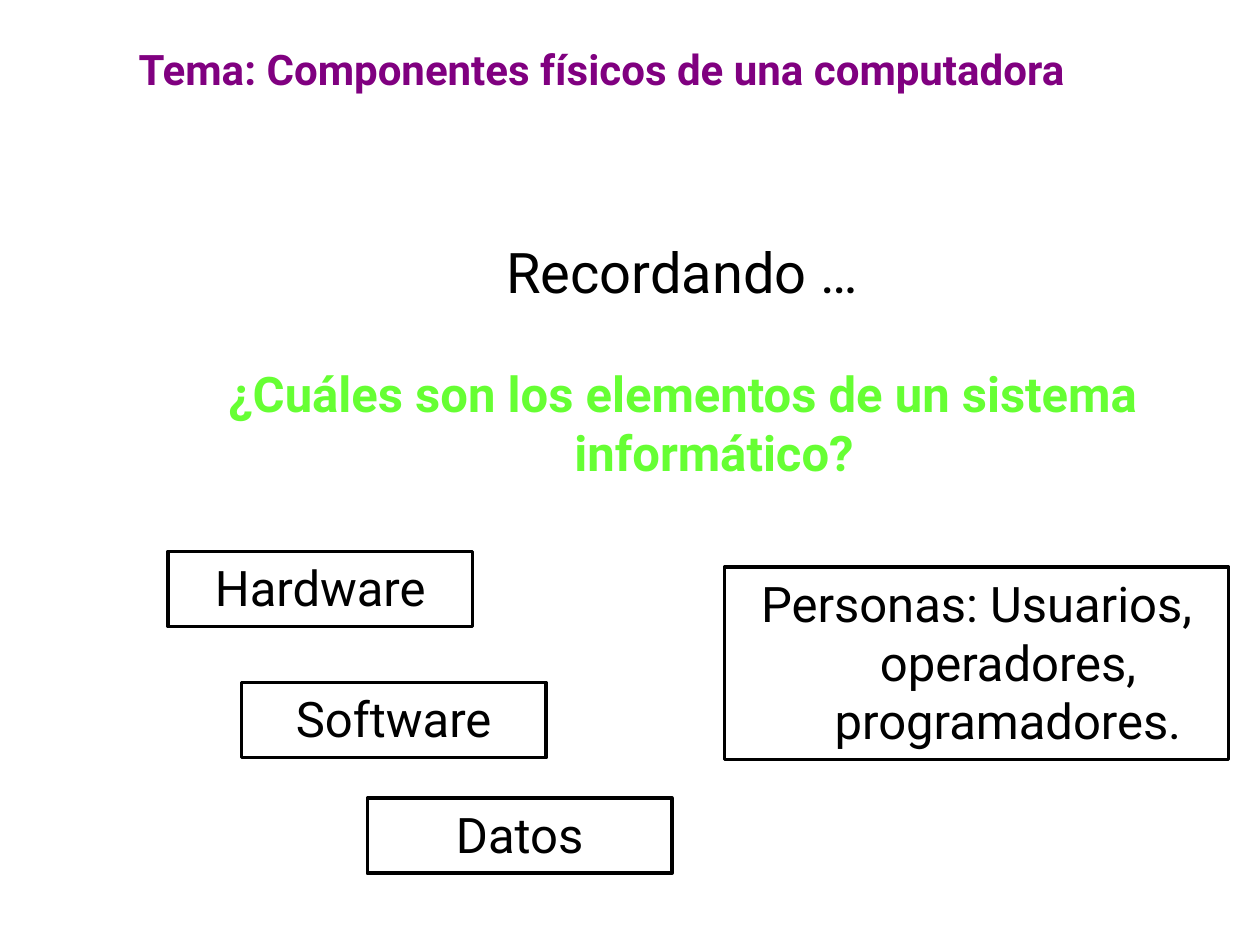
"""Build a slide that recalls the elements of a computer system."""
from pptx import Presentation
from pptx.dml.color import RGBColor
from pptx.enum.shapes import MSO_SHAPE as Shape
from pptx.enum.text import MSO_ANCHOR as Anchor, MSO_AUTO_SIZE as AutoSize, PP_ALIGN as Align
from pptx.util import Pt


def color(value):
    return RGBColor.from_string(value)


def write(shape, text, size=28, font_color="000000", bold=False, align=Align.CENTER, hanging=0):
    frame = shape.text_frame
    frame.word_wrap = True
    frame.auto_size = AutoSize.NONE
    frame.vertical_anchor = Anchor.TOP
    paragraph = frame.paragraphs[0]
    paragraph.alignment = align
    if hanging:
        properties = paragraph._p.get_or_add_pPr()
        properties.set("marL", str(Pt(hanging)))
        properties.set("indent", str(-Pt(hanging)))
    run = paragraph.add_run()
    run.text = text
    run.font.name = "Roboto"
    run.font.size = Pt(size)
    run.font.bold = bold
    run.font.color.rgb = color(font_color)


presentation = Presentation()
presentation.slide_width, presentation.slide_height = Pt(720), Pt(540)
slide = presentation.slides.add_slide(presentation.slide_layouts[5])
slide.background.fill.solid()
slide.background.fill.fore_color.rgb = color("FFFFFF")

title = slide.shapes.title
title.left, title.top, title.width, title.height = Pt(72), Pt(21), Pt(600), Pt(36)
write(title, "Tema: Componentes físicos de una computadora", size=24,
      font_color="800080", bold=True, align=Align.LEFT)

question = slide.shapes.add_textbox(Pt(72), Pt(204), Pt(636), Pt(74))
write(question, "¿Cuáles son los elementos de un sistema informático?",
      font_color="66FF33", bold=True, hanging=36)

reminder = slide.shapes.add_textbox(Pt(72), Pt(132), Pt(636), Pt(45))
write(reminder, "Recordando …", size=32)

elements = [
    ("Hardware", 96, 315, 174, 43),
    ("Software", 138, 390, 174, 43),
    ("Datos", 210, 456, 174, 43),
    ("Personas: Usuarios, operadores, programadores.", 414, 324, 288, 110),
]
for text, left, top, width, height in elements:
    box = slide.shapes.add_shape(Shape.RECTANGLE, Pt(left), Pt(top), Pt(width), Pt(height))
    box.shadow.inherit = False
    box.fill.background()
    box.line.color.rgb = color("000000")
    box.line.width = Pt(2)
    write(box, text, hanging=36)

presentation.save("out.pptx")
